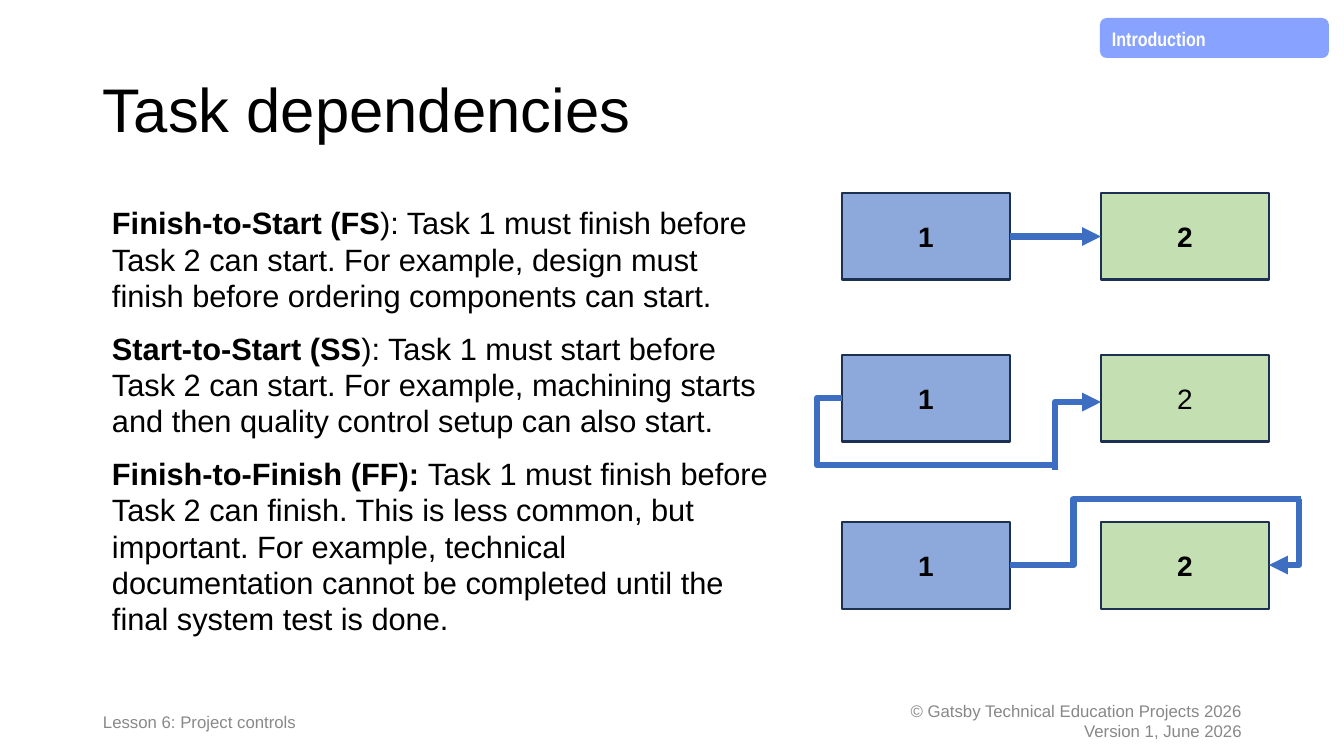
from dataclasses import dataclass

from lxml.etree import SubElement
from pptx import Presentation
from pptx.dml.color import RGBColor
from pptx.enum.shapes import MSO_CONNECTOR as Link, MSO_SHAPE as Shape
from pptx.enum.text import MSO_ANCHOR as Anchor, PP_ALIGN as Align
from pptx.oxml.ns import qn
from pptx.util import Inches, Pt

TITLE = "Task dependencies"
TAG = "Introduction"
LESSON = "Lesson 6: Project controls"
COPYRIGHT = ["© Gatsby Technical Education Projects 2026", "Version 1, June 2026"]
DEPENDENCIES = [
    ("Finish-to-Start (FS", "): Task 1 must finish before Task 2 can start. "
     "For example, design must finish before ordering components can start."),
    ("Start-to-Start (SS", "): Task 1 must start before Task 2 can start. "
     "For example, machining starts and then quality control setup can also start."),
    ("Finish-to-Finish (FF): ", "Task 1 must finish before Task 2 can finish. "
     "This is less common, but important. For example, technical documentation "
     "cannot be completed until the final system test is done."),
]
TASK_ROWS = [(193, True), (355, False), (522, True)]
TASK_COLUMNS = (842, 1101)
TASK_SIZE = (168, 87)
ELBOWS = [
    ((842, 398), (1055, 465), -0.118),
    ((1010, 565), (1137, 499), 0.5),
]
CORNERS = [((1055, 470), (1101, 402)), ((1299, 499), (1269, 565))]
FF_BAR = ((1123, 499), (1301, 499))


@dataclass(frozen=True)
class Theme:
    font: str = "Arial"
    tag_font: str = "Arial Narrow"
    ink: str = "000000"
    white: str = "FFFFFF"
    copyright: str = "888888"
    lesson: str = "898989"
    tag: str = "88A2FF"
    first: str = "8DA9DB"
    second: str = "C4E0B2"
    border: str = "1C3052"
    arrow: str = "3E6EC2"
    title_size: int = 44
    body_size: int = 22
    task_size: int = 20
    tag_size: int = 14
    footer_size: int = 12
    border_width: float = 2
    arrow_width: float = 4.5


THEME = Theme()
SCALE = Inches(7.5) / 756


def px(value):
    return round(value * SCALE)


def rgb(value):
    return RGBColor.from_string(value)


def style(span, size, color=THEME.ink, bold=False, font=THEME.font):
    span.font.name = font
    span.font.size = Pt(size)
    span.font.bold = bold
    span.font.color.rgb = rgb(color)


def set_frame(box, anchor, inset=(10, 5)):
    frame = box.text_frame
    frame.word_wrap = True
    frame.vertical_anchor = anchor
    frame.margin_left = frame.margin_right = px(inset[0])
    frame.margin_top = frame.margin_bottom = px(inset[1])
    return frame


def add_text(page, at, lines, size, color, align=Align.LEFT, spacing=1.0):
    box = page.shapes.add_textbox(*map(px, at))
    frame = set_frame(box, Anchor.MIDDLE)
    frame.text = "\n".join(lines)
    for para in frame.paragraphs:
        para.alignment = align
        para.line_spacing = spacing
        style(para.runs[0], size, color)


def add_block(page, kind, at, fill, border=None):
    box = page.shapes.add_shape(kind, *map(px, at))
    box.shadow.inherit = False
    box.fill.solid()
    box.fill.fore_color.rgb = rgb(fill)
    if border:
        box.line.color.rgb = rgb(border)
        box.line.width = Pt(THEME.border_width)
    else:
        box.line.fill.background()
    return box


def add_label(box, text, size, align, anchor, **look):
    frame = set_frame(box, anchor)
    frame.text = text
    para = frame.paragraphs[0]
    para.alignment = align
    style(para.runs[0], size, **look)
    return para


def add_line(page, kind, start, end, arrow=False):
    line = page.shapes.add_connector(kind, *map(px, (*start, *end)))
    line.line.color.rgb = rgb(THEME.arrow)
    line.line.width = Pt(THEME.arrow_width)
    if arrow:
        SubElement(line.line._get_or_add_ln(), qn("a:tailEnd"), type="triangle")
    SubElement(line._element.spPr, qn("a:effectLst"))
    return line


def add_elbow(page, start, end, bend):
    line = add_line(page, Link.ELBOW, start, end)
    guides = line._element.spPr.prstGeom.get_or_add_avLst()
    SubElement(guides, qn("a:gd"), name="adj1", fmla=f"val {round(bend * 100000)}")


def add_corner(page, start, end):
    (x1, y1), (x2, y2) = start, end
    across, along = abs(x2 - x1), abs(y2 - y1)
    left, top = (x1 + x2 - along) / 2, (y1 + y2 - across) / 2
    line = add_line(page, Link.ELBOW, (left, top), (left + along, top + across), True)
    properties = line._element.spPr
    properties.prstGeom.set("prst", "bentConnector2")
    properties.xfrm.set("rot", str((90 if y2 > y1 else 270) * 60000))


def add_dependencies(page):
    box = add_block(page, Shape.RECTANGLE, (92, 186, 700, 490), THEME.white)
    frame = set_frame(box, Anchor.TOP, (20, 20))
    for index, (name, meaning) in enumerate(DEPENDENCIES):
        para = frame.add_paragraph() if index else frame.paragraphs[0]
        para.alignment = Align.LEFT
        para.line_spacing = 0.98
        if index:
            para.space_before = Pt(12)
        for text, bold in ((name, True), (meaning, False)):
            span = para.add_run()
            span.text = text
            style(span, THEME.body_size, bold=bold)


def add_tasks(page):
    rows = []
    for top, second_bold in TASK_ROWS:
        row = []
        looks = (("1", THEME.first, True), ("2", THEME.second, second_bold))
        for left, (text, fill, bold) in zip(TASK_COLUMNS, looks):
            box = add_block(page, Shape.RECTANGLE, (left, top, *TASK_SIZE), fill, THEME.border)
            add_label(box, text, THEME.task_size, Align.CENTER, Anchor.MIDDLE, bold=bold)
            row.append(box)
        rows.append(row)
    return rows


def main():
    deck = Presentation()
    deck.slide_width, deck.slide_height = px(1344), px(756)
    page = deck.slides.add_slide(deck.slide_layouts[6])

    add_text(page, (798, 701, 454, 40), COPYRIGHT, THEME.footer_size, THEME.copyright, Align.RIGHT)
    add_dependencies(page)
    add_text(page, (93, 701, 464, 40), [LESSON], THEME.footer_size, THEME.lesson, spacing=1.08)

    first, second = add_tasks(page)[0]
    for start, end, bend in ELBOWS:
        add_elbow(page, start, end, bend)
    direct = add_line(page, Link.STRAIGHT, (1010, 236), (1101, 236), True)
    direct.begin_connect(first, 3)
    direct.end_connect(second, 1)
    add_line(page, Link.STRAIGHT, *FF_BAR)
    for start, end in CORNERS:
        add_corner(page, start, end)

    tag = add_block(page, Shape.FLOWCHART_ALTERNATE_PROCESS, (1100, 18, 229, 40), THEME.tag)
    para = add_label(tag, TAG, THEME.tag_size, Align.LEFT, Anchor.TOP,
                     color=THEME.white, bold=True, font=THEME.tag_font)
    para.line_spacing = 1.08
    add_text(page, (93, 40, 1159, 146), [TITLE], THEME.title_size, THEME.ink, spacing=0.9)
    deck.save("out.pptx")


if __name__ == "__main__":
    main()
